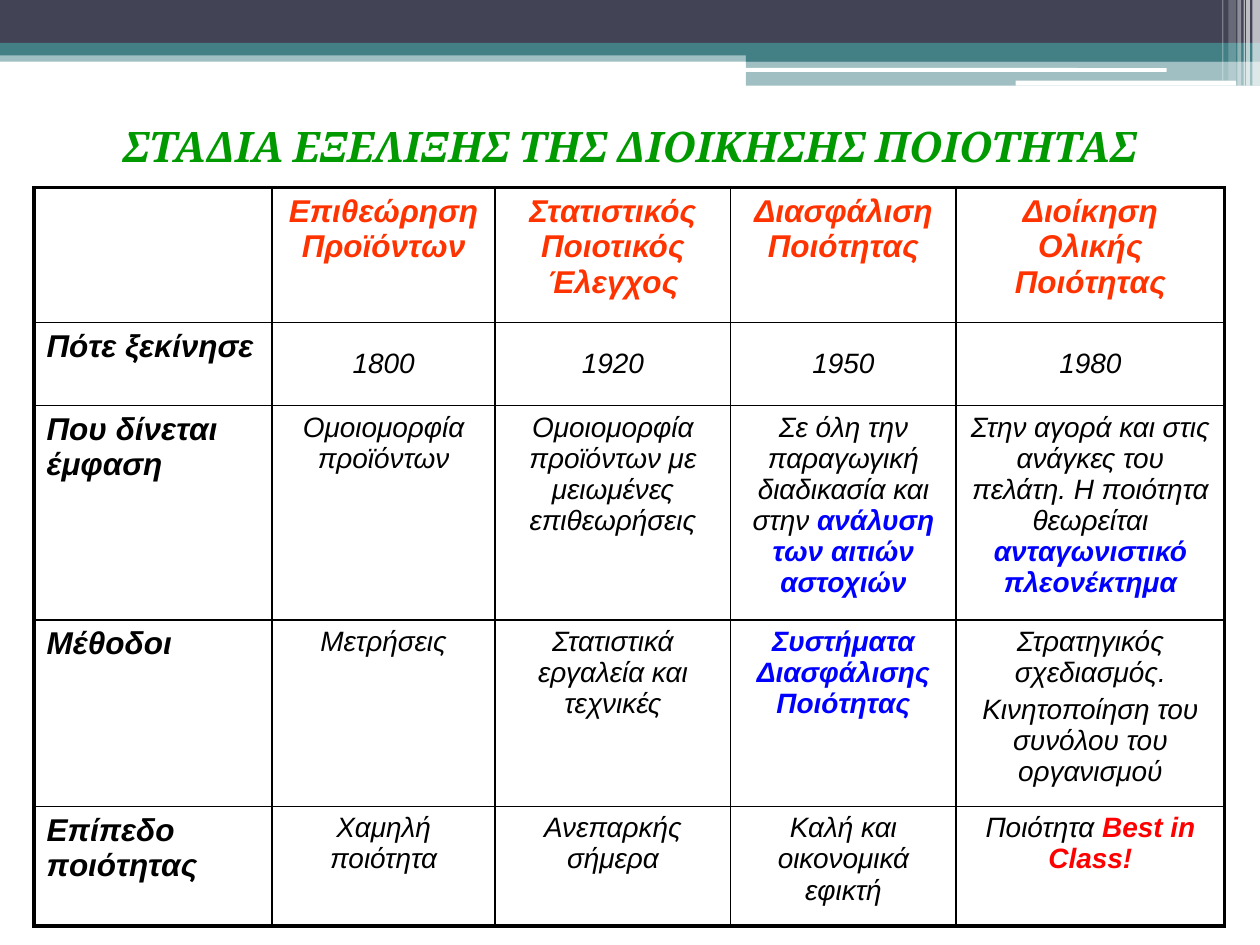
from lxml import etree
from pptx import Presentation
from pptx import util as u
from pptx.dml.color import RGBColor
from pptx.enum import shapes, text
from pptx.oxml import ns

WHITE = RGBColor(0xFF, 0xFF, 0xFF)
BLACK = RGBColor(0, 0, 0)
NAVY = RGBColor(0x42, 0x44, 0x56)
TEAL = RGBColor(0x43, 0x80, 0x86)
GREEN = RGBColor(0, 0x99, 0)
ORANGE = RGBColor(0xFF, 0x33, 0)
BLUE = RGBColor(0, 0, 0xFF)
RED = RGBColor(0xFF, 0, 0)

TITLE = "ΣΤΑΔΙΑ ΕΞΕΛΙΞΗΣ ΤΗΣ ΔΙΟΙΚΗΣΗΣ ΠΟΙΟΤΗΤΑΣ"
HEADERS = ["", "Επιθεώρηση Προϊόντων", "Στατιστικός Ποιοτικός Έλεγχος",
           "Διασφάλιση Ποιότητας", "Διοίκηση Ολικής Ποιότητας"]
ROWS = [
    ["Πότε ξεκίνησε", "1800", "1920", "1950", "1980"],
    ["Που δίνεται έμφαση", "Ομοιομορφία προϊόντων",
     "Ομοιομορφία προϊόντων με μειωμένες επιθεωρήσεις",
     [["Σε όλη την παραγωγική διαδικασία και στην ",
       ("ανάλυση των αιτιών αστοχιών", BLUE)]],
     [["Στην αγορά και στις ανάγκες του πελάτη. Η ποιότητα θεωρείται ",
       ("ανταγωνιστικό πλεονέκτημα", BLUE)]]],
    ["Μέθοδοι", "Μετρήσεις", "Στατιστικά εργαλεία και τεχνικές",
     [[("Συστήματα Διασφάλισης Ποιότητας", BLUE)]],
     [["Στρατηγικός σχεδιασμός."], ["Κινητοποίηση του συνόλου του οργανισμού"]]],
    ["Επίπεδο ποιότητας", "Χαμηλή ποιότητα", "Ανεπαρκής σήμερα",
     "Καλή και οικονομικά εφικτή",
     [["Ποιότητα ", ("Best in Class!", RED)]]],
]
COLUMN_WIDTHS = [1.89, 1.77, 1.87, 1.79, 2.13]
ROW_HEIGHTS = [1.07, 0.66, 1.7, 1.48, 0.95]

RECT = shapes.MSO_SHAPE.RECTANGLE
ROUND = shapes.MSO_SHAPE.ROUNDED_RECTANGLE
BANDS = [
    (RECT, 0, 0.4, 10, 0.09, TEAL, 50),
    (RECT, 0, 0, 10, 0.34, NAVY, 100),
    (RECT, 0, 0.34, 10, 0.1, TEAL, 100),
    (RECT, 5.92, 0.39, 4.08, 0.1, TEAL, 100),
    (RECT, 5.92, 0.48, 4.08, 0.2, TEAL, 50),
    (ROUND, 5.91, 0.54, 3.35, 0.03, WHITE, 100),
    (ROUND, 8.06, 0.64, 1.75, 0.04, WHITE, 100),
]
STRIPES = [(9.94, 0.06, 0.68, 65), (9.89, 0.03, 0.68, 65), (9.87, 0.01, 0.68, 60),
           (9.82, 0.03, 0.68, 40), (9.75, 0.06, 0.64, 20), (9.7, 0.01, 0.64, 30)]


def add_band(page, kind, left, top, width, height, color, opacity):
    band = page.shapes.add_shape(kind, *map(u.Inches, (left, top, width, height)))
    band.shadow.inherit = False
    band.line.fill.background()
    band.fill.solid()
    band.fill.fore_color.rgb = color
    if opacity < 100:
        tint = band.fill._xPr.find(".//" + ns.qn("a:srgbClr"))
        etree.SubElement(tint, ns.qn("a:alpha"), val=str(opacity * 1000))


def add_span(para, words, color, **format_values):
    span = para.add_run()
    span.text = words
    span.font.color.rgb = color
    for name, value in format_values.items():
        setattr(span.font, name, value)


def add_title(page):
    title = page.shapes.title
    frame = title.text_frame
    for name, value in zip(("left", "top", "width", "height"), (0.08, 0.91, 9.84, 0.5)):
        setattr(title, name, u.Inches(value))
    frame.word_wrap = True
    frame.auto_size = text.MSO_AUTO_SIZE.SHAPE_TO_FIT_TEXT
    frame.vertical_anchor = text.MSO_ANCHOR.TOP
    para = frame.paragraphs[0]
    para.alignment = text.PP_ALIGN.CENTER
    para.space_before = u.Pt(12)
    add_span(para, TITLE, GREEN, name="Cambria", size=u.Pt(24), bold=True, italic=True)


def fill_cell(cell, content, size, color, bold, alignment):
    paragraphs = [[content]] if isinstance(content, str) else content
    for index, spans in enumerate(paragraphs):
        frame = cell.text_frame
        para = frame.add_paragraph() if index else frame.paragraphs[0]
        para.alignment = alignment
        para.space_before = u.Pt(size * 0.2)
        for item in filter(None, spans):
            plain = isinstance(item, str)
            words, tone = (item, color) if plain else item
            add_span(para, words, tone, name="Arial", size=u.Pt(size),
                     bold=bold or not plain, italic=True)


def set_borders(cell, outer_sides):
    properties = cell._tc.get_or_add_tcPr()
    for side in "LRTB":
        width = u.Pt(2.25 if side in outer_sides else 1)
        line = etree.SubElement(properties, ns.qn("a:ln" + side), w=str(int(width)))
        fill = etree.SubElement(line, ns.qn("a:solidFill"))
        etree.SubElement(fill, ns.qn("a:srgbClr"), val=str(BLACK))
    cell.fill.background()


def add_stages_table(page):
    content = [HEADERS] + ROWS
    last_row, last_column = len(content) - 1, len(HEADERS) - 1
    table = page.shapes.add_table(
        len(content), len(HEADERS), u.Inches(0.27), u.Inches(1.49),
        u.Inches(sum(COLUMN_WIDTHS)), u.Inches(sum(ROW_HEIGHTS))).table
    table.first_row = table.horz_banding = False
    for column, width in zip(table.columns, COLUMN_WIDTHS):
        column.width = u.Inches(width)
    for row, height in zip(table.rows, ROW_HEIGHTS):
        row.height = u.Inches(height)
    for r, values in enumerate(content):
        for c, value in enumerate(values):
            cell = table.cell(r, c)
            heading = r == 0 or c == 0
            fill_cell(cell, value, 18 if heading else 16, ORANGE if r == 0 else BLACK,
                      heading, text.PP_ALIGN.CENTER if c else text.PP_ALIGN.LEFT)
            if r == 1 and c:
                cell.vertical_anchor = text.MSO_ANCHOR.MIDDLE
            edges = {"L": c == 0, "R": c == last_column, "T": r == 0, "B": r == last_row}
            set_borders(cell, [side for side, outer in edges.items() if outer])


def main():
    deck = Presentation()
    deck.slide_width, deck.slide_height = u.Inches(10), u.Inches(7.5)
    page = deck.slides.add_slide(deck.slide_layouts.get_by_name("Title Only"))
    page.background.fill.solid()
    page.background.fill.fore_color.rgb = WHITE
    for band in BANDS:
        add_band(page, *band)
    for left, width, height, opacity in STRIPES:
        add_band(page, RECT, left, 0, width, height, WHITE, opacity)
    add_title(page)
    add_stages_table(page)
    deck.save("out.pptx")


if __name__ == "__main__":
    main()
